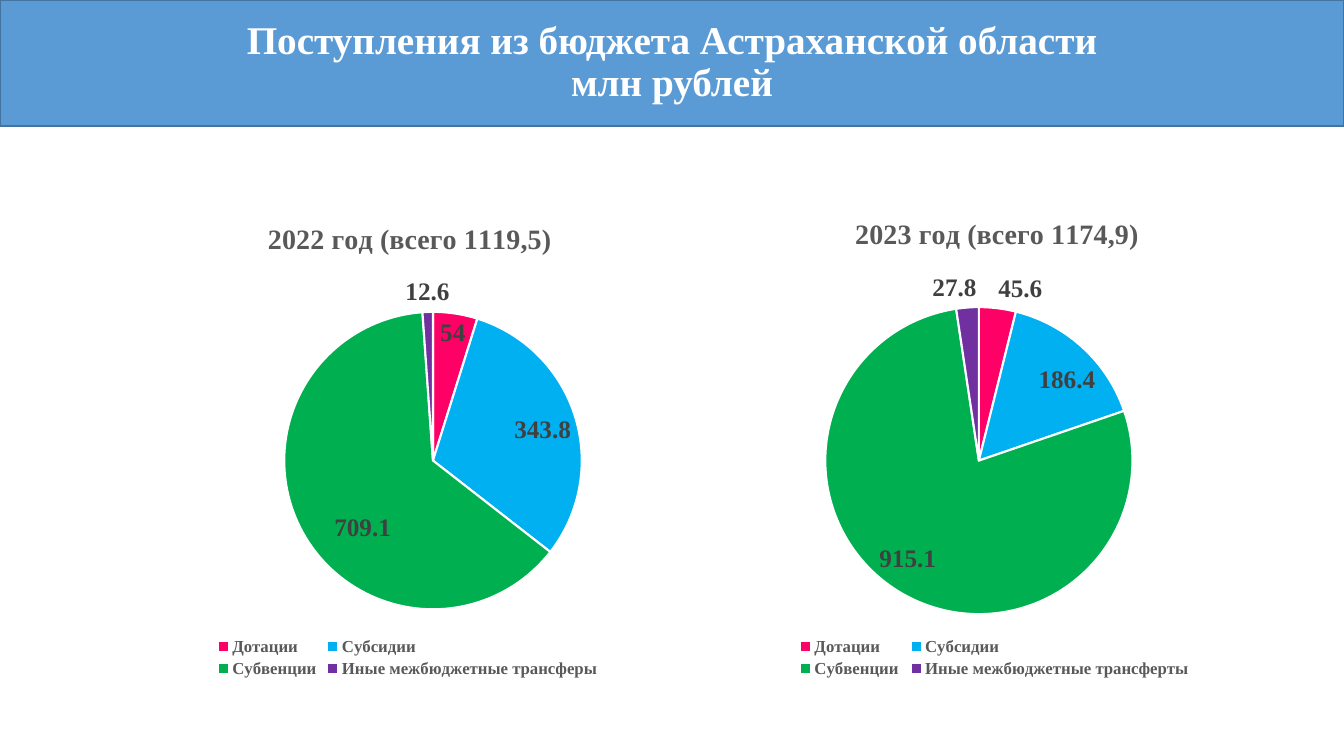
import pptx
import pptx.chart.data
import pptx.dml.color
import pptx.enum.chart
import pptx.enum.shapes
import pptx.enum.text
import pptx.oxml
import pptx.oxml.ns
import pptx.util

Inches = pptx.util.Inches
Pt = pptx.util.Pt

FONT = "Times New Roman"
COLORS = {
    "banner": "5B9BD5", "banner_line": "43739E", "white": "FFFFFF",
    "heading": "595959", "label": "404040",
    "grants": "FF0066", "subsidies": "00B0F0",
    "subventions": "00B050", "other": "7030A0",
}
SLICES = ["grants", "subsidies", "subventions", "other"]
BANNER_LINES = ["Поступления из бюджета Астраханской области", "млн рублей"]
BEST_FIT = pptx.enum.chart.XL_LABEL_POSITION.BEST_FIT

# The "_at" places and label shifts are fractions of the chart's width and height
CHARTS = [
    {
        "box": (0.92, 2, 6.25, 4.76),
        "title": "2022 год (всего 1119,5)",
        "categories": ["Дотации", "Субсидии", "Субвенции", "Иные межбюджетные трансферы"],
        "values": [54, 343.8, 709.1, 12.6],
        "title_at": (0.27, 0.03),
        "pie_at": (0.3, 0.23, 0.48, 0.62),
        "legend_at": (0.19, 0.9, 0.62, 0.1),
        "label_shifts": {"subventions": (0.15, -0.04)},
    },
    {
        "box": (6.75, 2, 6.23, 4.76),
        "title": "2023 год (всего 1174,9)",
        "categories": ["Дотации", "Субсидии", "Субвенции", "Иные межбюджетные трансферты"],
        "values": [45.6, 186.4, 915.1, 27.8],
        "title_at": (0.27, 0.02),
        "pie_at": (0.23, 0.22, 0.49, 0.64),
        "legend_at": (0.18, 0.9, 0.64, 0.1),
        "label_shifts": {"other": (-0.02, 0)},
    },
]


def rgb(name):
    return pptx.dml.color.RGBColor.from_string(COLORS[name])


def set_attributes(target, values):
    for attribute, value in values.items():
        setattr(target, attribute, value)


def format_font(font, size, color):
    set_attributes(font, {"name": FONT, "size": Pt(size), "bold": True})
    font.color.rgb = rgb(color)


def format_area(area, fill, line, width):
    area.fill.solid()
    area.fill.fore_color.rgb = rgb(fill)
    area.line.color.rgb = rgb(line)
    area.line.width = Pt(width)


def set_layout(element, index, numbers, modes):
    """Insert a manual layout: x, y and, when given, width and height."""
    for old_layout in element.findall(pptx.oxml.ns.qn("c:layout")):
        element.remove(old_layout)
    settings = {**modes, **dict(zip("xywh", numbers))}
    children = "".join(f'<c:{tag} val="{value}"/>' for tag, value in settings.items())
    namespace = pptx.oxml.ns.nsdecls("c")
    element.insert(index, pptx.oxml.parse_xml(
        f"<c:layout {namespace}><c:manualLayout>{children}</c:manualLayout></c:layout>"))


def place_chart_parts(chart, content):
    from_edge = {"xMode": "edge", "yMode": "edge"}
    plot_area = chart.plots[0]._element.getparent()
    set_layout(chart.chart_title._element, 1, content["title_at"], from_edge)
    set_layout(chart.legend._element, 1, content["legend_at"], from_edge)
    set_layout(plot_area, 0, content["pie_at"], {"layoutTarget": "inner", **from_edge})


def add_title(chart, text):
    chart.has_title = True
    frame = chart.chart_title.text_frame
    frame.text = text
    format_font(frame.paragraphs[0].runs[0].font, 20, "heading")


def add_legend(chart):
    chart.has_legend = True
    set_attributes(chart.legend, {
        "position": pptx.enum.chart.XL_LEGEND_POSITION.BOTTOM,
        "include_in_layout": False,
    })
    format_font(chart.legend.font, 12, "heading")


def add_value_labels(series, shifts):
    labels = series.data_labels
    set_attributes(labels, {
        "show_value": True, "show_percentage": False,
        "show_legend_key": False, "position": BEST_FIT,
    })
    format_font(labels.font, 18, "label")

    # A shifted label moves away from its automatic place
    for slice_name, shift in shifts.items():
        number = SLICES.index(slice_name)
        label = series.points[number].data_label
        format_font(label.font, 18, "label")
        label.position = BEST_FIT
        [label_element] = labels._element.xpath(f"c:dLbl[c:idx/@val='{number}']")
        set_layout(label_element, 1, shift, {})


def add_pie(slide, content):
    data = pptx.chart.data.CategoryChartData()
    data.categories = content["categories"]
    data.add_series(content["title"], content["values"])
    chart = slide.shapes.add_chart(
        pptx.enum.chart.XL_CHART_TYPE.PIE, *map(Inches, content["box"]), data).chart
    set_attributes(chart.font, {"name": "Calibri", "size": Pt(10)})
    add_title(chart, content["title"])
    add_legend(chart)
    place_chart_parts(chart, content)

    plot = chart.plots[0]
    plot.vary_by_categories = True
    series = plot.series[0]
    for number, color in enumerate(SLICES):
        format_area(series.points[number].format, color, "white", 1.5)
    add_value_labels(series, content["label_shifts"])


def add_banner(slide, lines):
    shape = slide.shapes.add_shape(
        pptx.enum.shapes.MSO_SHAPE.RECTANGLE, 0, 0, Inches(13.33), Inches(1.25))
    shape.shadow.inherit = False
    format_area(shape, "banner", "banner_line", 1)
    frame = shape.text_frame
    set_attributes(frame, {
        "word_wrap": True,
        "vertical_anchor": pptx.enum.text.MSO_ANCHOR.MIDDLE,
        "text": "\n".join(lines),
    })
    for paragraph in frame.paragraphs:
        set_attributes(paragraph, {
            "alignment": pptx.enum.text.PP_ALIGN.CENTER, "line_spacing": 0.9,
        })
        format_font(paragraph.runs[0].font, 28, "white")


def main():
    presentation = pptx.Presentation()
    set_attributes(presentation, {
        "slide_width": Inches(13.33), "slide_height": Inches(7.5),
    })
    slide = presentation.slides.add_slide(presentation.slide_layouts[6])
    for content in CHARTS:
        add_pie(slide, content)
    add_banner(slide, BANNER_LINES)
    presentation.save("out.pptx")


if __name__ == "__main__":
    main()
